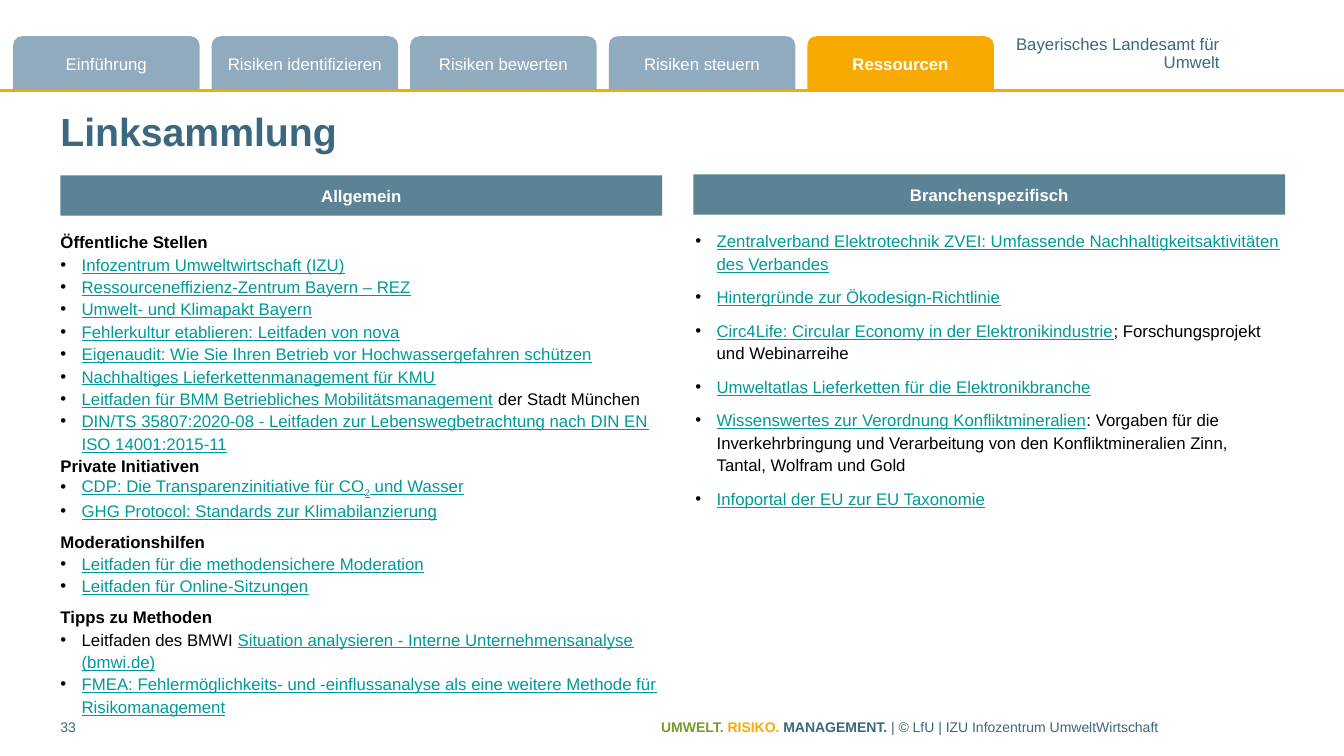
from lxml.etree import SubElement
from pptx import Presentation
from pptx.dml.color import RGBColor
from pptx.enum.shapes import MSO_CONNECTOR, MSO_SHAPE
from pptx.enum.text import MSO_ANCHOR, PP_ALIGN
from pptx.oxml.ns import qn
from pptx.util import Inches, Pt

THEME = {
    "font": "Arial",
    "blue": "3B687F", "slate": "5C8395", "mist": "90ABBE", "amber": "F9AA00",
    "green": "7B9C2A", "teal": "009999", "black": "000000", "white": "FFFFFF",
    "title": 28, "body": 12, "small": 10, "leading": 16,
}

deck = Presentation()
deck.slide_width, deck.slide_height = Inches(13.33), Inches(7.5)
page = deck.slides.add_slide(deck.slide_layouts[6])
COLUMN, ROW = deck.slide_width / 160, deck.slide_height / 90


def add_box(column, row, columns, rows, shape=None, fill=None, inset=(0, 0.6)):
    area = [int(n) for n in (column * COLUMN, row * ROW, columns * COLUMN, rows * ROW)]
    if shape is None:
        box = page.shapes.add_textbox(*area)
    else:
        box = page.shapes.add_shape(shape, *area)
        box.shadow.inherit = False
        box.fill.solid()
        box.fill.fore_color.rgb = RGBColor.from_string(THEME[fill])
        box.line.fill.background()
    frame = box.text_frame
    frame.word_wrap = True
    frame.margin_left = frame.margin_right = int(inset[0] * COLUMN)
    frame.margin_top = frame.margin_bottom = int(inset[1] * ROW)
    frame.vertical_anchor = MSO_ANCHOR.MIDDLE if shape else MSO_ANCHOR.TOP
    return frame


def add_para(frame, spans, size="body", align=PP_ALIGN.LEFT, bullet=False):
    para = frame.paragraphs[0] if not frame.paragraphs[0].runs else frame.add_paragraph()
    para.alignment = align
    if bullet:
        properties = para._p.get_or_add_pPr()
        properties.set("marL", str(Inches(0.21)))
        properties.set("indent", str(-Inches(0.21)))
        colour = SubElement(properties, qn("a:buClr"))
        SubElement(colour, qn("a:srgbClr"), val=THEME["black"])
        SubElement(properties, qn("a:buFont"), typeface=THEME["font"])
        SubElement(properties, qn("a:buChar"), char="•")
    for text, colour, *marks in spans:
        span = para.add_run()
        span.text = text
        span.font.name = THEME["font"]
        span.font.size = Pt(THEME[size])
        span.font.color.rgb = RGBColor.from_string(THEME[colour])
        span.font.bold = "bold" in marks
        span.font.underline = colour == "teal"
        if "sub" in marks:
            span._r.get_or_add_rPr().set("baseline", "-25000")
    return para


rule = page.shapes.add_connector(
    MSO_CONNECTOR.STRAIGHT, 0, int(10.8 * ROW), deck.slide_width, int(10.8 * ROW))
rule.line.color.rgb = RGBColor.from_string(THEME["amber"])
rule.line.width = Pt(2)
SubElement(rule._element.spPr, qn("a:effectLst"))

sender = add_box(120.84, 4.44, 24.36, 4.08, inset=(0, 0))
sender.word_wrap = False
for line in ("Bayerisches Landesamt für", "Umwelt"):
    add_para(sender, [(line, "blue")], align=PP_ALIGN.RIGHT).line_spacing = 0.85

TABS = ["Einführung", "Risiken identifizieren", "Risiken bewerten", "Risiken steuern", "Ressourcen"]
ACTIVE = "Ressourcen"
for index, name in enumerate(TABS):
    tab = add_box(1.56 + index * 23.64, 4.32, 22.2, 6.36, MSO_SHAPE.ROUND_2_SAME_RECTANGLE,
                  "amber" if name == ACTIVE else "mist", (0.48, 0.6))
    marks = ["bold"] if name == ACTIVE else []
    add_para(tab, [(name, "white", *marks)], align=PP_ALIGN.CENTER)

title = add_box(7.2, 12.24, 147.72, 6.6)
title.vertical_anchor = MSO_ANCHOR.MIDDLE
add_para(title, [("Linksammlung", "blue", "bold")], "title")

HEADERS = [("Allgemein", 7.2, 20.88, 71.64), ("Branchenspezifisch", 82.56, 20.76, 70.44)]
for name, column, row, columns in HEADERS:
    header = add_box(column, row, columns, 4.8, MSO_SHAPE.RECTANGLE, "slate", (1.2, 1.2))
    add_para(header, [(name, "white", "bold")], align=PP_ALIGN.CENTER)

GENERAL = [
    ("Öffentliche Stellen", 0, [
        [("Infozentrum Umweltwirtschaft (IZU)", "teal")],
        [("Ressourceneffizienz-Zentrum Bayern – REZ", "teal")],
        [("Umwelt- und Klimapakt Bayern", "teal")],
        [("Fehlerkultur etablieren: Leitfaden von nova", "teal")],
        [("Eigenaudit: Wie Sie Ihren Betrieb vor Hochwassergefahren schützen", "teal")],
        [("Nachhaltiges Lieferkettenmanagement für KMU", "teal")],
        [("Leitfaden für BMM Betriebliches Mobilitätsmanagement", "teal"),
         (" der Stadt München", "black")],
        [("DIN/TS 35807:2020-08 - Leitfaden zur Lebenswegbetrachtung nach DIN EN "
          "ISO 14001:2015-11", "teal")],
    ]),
    ("Private Initiativen", 6, [
        [("CDP: Die Transparenzinitiative für CO", "teal"), ("2", "teal", "sub"),
         (" und Wasser", "teal")],
        [("GHG Protocol: Standards zur Klimabilanzierung", "teal")],
    ]),
    ("Moderationshilfen", 6, [
        [("Leitfaden für die methodensichere Moderation", "teal")],
        [("Leitfaden für Online-Sitzungen", "teal")],
    ]),
    ("Tipps zu Methoden", 0, [
        [("Leitfaden des BMWI ", "black"),
         ("Situation analysieren - Interne Unternehmensanalyse (bmwi.de)", "teal")],
        [("FMEA: Fehlermöglichkeits- und -einflussanalyse als eine weitere Methode für "
          "Risikomanagement", "teal")],
    ]),
]
general = add_box(7.2, 26.76, 71.4, 57.36)
for heading, gap, links in GENERAL:
    add_para(general, [(heading, "black", "bold")])
    for spans in links:
        last = add_para(general, spans, bullet=True)
    last.space_after = Pt(gap)

SECTOR = [
    [("Zentralverband Elektrotechnik ZVEI: Umfassende Nachhaltigkeitsaktivitäten "
      "des Verbandes", "teal")],
    [("Hintergründe zur Ökodesign-Richtlinie", "teal")],
    [("Circ4Life: Circular Economy in der Elektronikindustrie", "teal"),
     ("; Forschungsprojekt und Webinarreihe", "black")],
    [("Umweltatlas Lieferketten für die Elektronikbranche", "teal")],
    [("Wissenswertes zur Verordnung Konfliktmineralien", "teal"),
     (": Vorgaben für die Inverkehrbringung und Verarbeitung von den Konfliktmineralien "
      "Zinn, Tantal, Wolfram und Gold", "black")],
    [("Infoportal der EU zur EU Taxonomie", "teal")],
]
sector = add_box(82.8, 26.64, 69.72, 57.48)
for index, spans in enumerate(SECTOR):
    add_para(sector, spans, bullet=True).space_before = Pt(8 if index else 0)

for frame in (general, sector):
    for para in frame.paragraphs:
        para.line_spacing = Pt(THEME["leading"])

footer = add_box(78.72, 84.96, 76.32, 3.72)
add_para(footer, [
    ("UMWELT. ", "green", "bold"), ("RISIKO. ", "amber", "bold"),
    ("MANAGEMENT. ", "blue", "bold"),
    ("| © LfU | IZU Infozentrum UmweltWirtschaft", "blue"),
], "small")
number = add_box(7.2, 84.96, 8.4, 3.72)
add_para(number, [("33", "blue")], "small")

deck.save("out.pptx")
